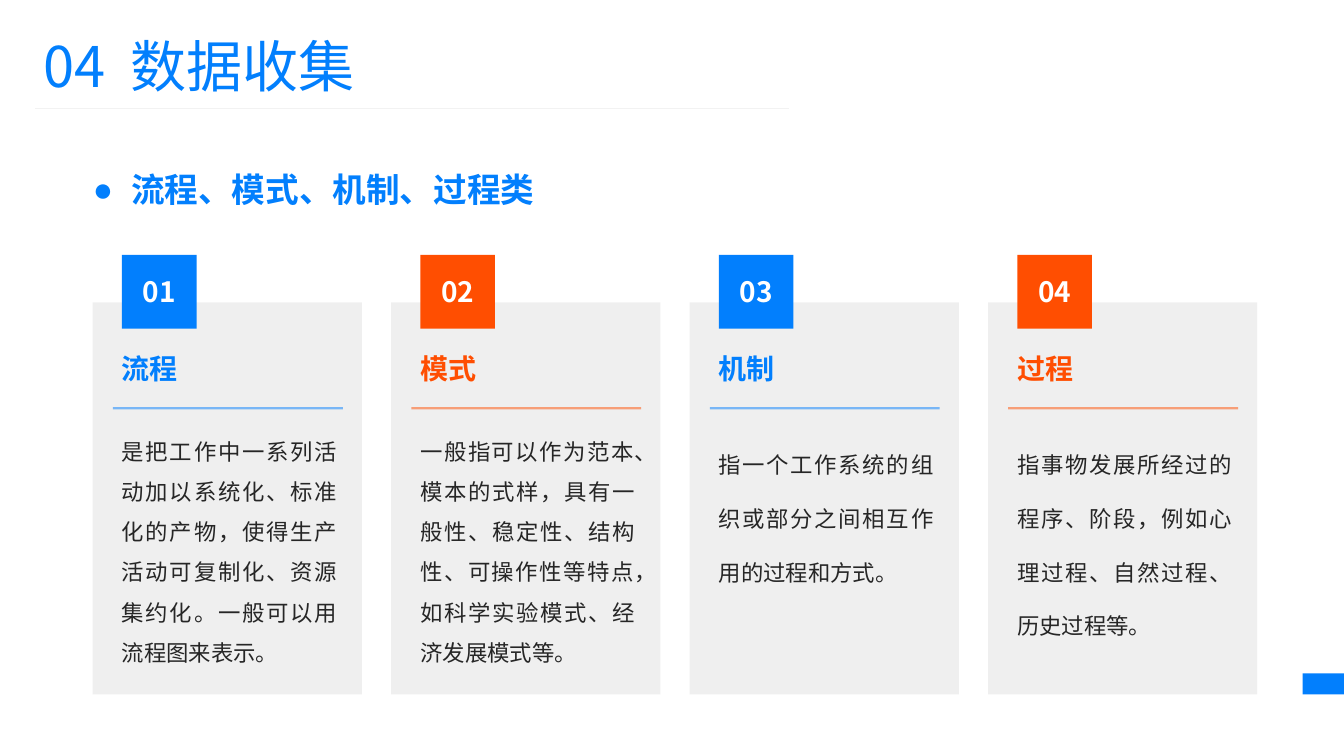
from lxml import etree
from pptx import Presentation
from pptx.dml.color import RGBColor
from pptx.enum import shapes, text
from pptx.oxml import ns
from pptx.util import Inches, Pt

FONT = "Noto Sans CJK SC"
BLUE, ORANGE = "027FFD", "FF4E01"
GREY, DARK, WHITE, PALE = "999999", "262626", "FFFFFF", "F2F2F2"
ALIGN, ANCHOR = text.PP_ALIGN, text.MSO_ANCHOR

CARDS = [
    ("流程", "是把工作中一系列活动加以系统化、标准化的产物，使得生产活动可复制化、资源集约化。一般可以用流程图来表示。", 1.5),
    ("模式", "一般指可以作为范本、模本的式样，具有一般性、稳定性、结构性、可操作性等特点，如科学实验模式、经济发展模式等。", 1.5),
    ("机制", "指一个工作系统的组织或部分之间相互作用的过程和方式。", 2.0),
    ("过程", "指事物发展所经过的程序、阶段，例如心理过程、自然过程、历史过程等。", 2.0),
]


def color(hex_value):
    return RGBColor.from_string(hex_value)


def add_alpha(color_format_parent, percent):
    """Make the solid colour below an element partly transparent."""
    rgb = color_format_parent.find(".//" + ns.qn("a:srgbClr"))
    etree.SubElement(rgb, ns.qn("a:alpha"), val=str(percent * 1000))


def write(shape, *pieces, size, fill, bold=False, align=ALIGN.LEFT,
          anchor=ANCHOR.TOP, spacing=None, inset=0, wrap=True):
    """Write the pieces as runs of one paragraph and return the paragraph."""
    frame = shape.text_frame
    frame.word_wrap = wrap
    frame.vertical_anchor = anchor
    if inset is not None:
        frame.margin_left = frame.margin_right = Inches(inset)
        frame.margin_top = frame.margin_bottom = Inches(inset)
    paragraph = frame.paragraphs[0]
    paragraph.alignment = align
    if spacing:
        paragraph.line_spacing = spacing
    for piece in pieces:
        run = paragraph.add_run()
        run.text = piece
        font = run.font
        font.size, font.bold, font.name = Pt(size), bold, FONT
        font.color.rgb = color(fill)
        east_asian = etree.SubElement(font._element, ns.qn("a:ea"))
        east_asian.set("typeface", FONT)
    return paragraph


def add_text(slide, left, top, width, height, *pieces, **style):
    box = slide.shapes.add_textbox(
        Inches(left), Inches(top), Inches(width), Inches(height))
    return write(box, *pieces, **style)


def add_block(slide, left, top, width, height, fill, alpha=None):
    block = slide.shapes.add_shape(
        shapes.MSO_SHAPE.RECTANGLE,
        Inches(left), Inches(top), Inches(width), Inches(height))
    block.shadow.inherit = False
    block.fill.solid()
    block.fill.fore_color.rgb = color(fill)
    block.line.fill.background()
    if alpha:
        add_alpha(block._element.spPr, alpha)
    return block


def add_rule(slide, left, top, width, stroke, weight, alpha=None):
    rule = slide.shapes.add_connector(
        shapes.MSO_CONNECTOR.STRAIGHT,
        Inches(left), Inches(top), Inches(left + width), Inches(top))
    rule.line.color.rgb = color(stroke)
    rule.line.width = Pt(weight)
    properties = rule._element.spPr
    if alpha:
        add_alpha(properties, alpha)
    etree.SubElement(properties, ns.qn("a:effectLst"))


def add_title(slide, left, top, width, height):
    title = add_text(slide, left, top, width, height, "04", " ", "数据收集",
                     size=40, fill=BLUE, inset=None)
    # Widen the gap between number and words
    title.runs[1].font._element.set("spc", "900")
    add_rule(slide, left + 0.02, top + 0.82, 7.48, PALE, 0.5)


def add_heading(slide, left, top, width, height):
    heading = add_text(slide, left, top, width, height, "流程、模式、机制、过程类",
                       size=24, fill=BLUE, bold=True,
                       align=ALIGN.CENTER, anchor=ANCHOR.BOTTOM)
    properties = heading._p.get_or_add_pPr()
    hang = Inches(0.38)
    properties.set("marL", str(hang))
    properties.set("indent", str(-hang))
    etree.SubElement(properties, ns.qn("a:buFont"), typeface="Arial")
    etree.SubElement(properties, ns.qn("a:buChar"), char="●")


def add_card(slide, left, top, width, height, number, name, body, spacing, accent):
    inner, inner_width = left + 0.29, width - 0.54
    add_block(slide, left, top, width, height, GREY, alpha=15)
    add_text(slide, inner, top + 1.21, inner_width, 1.89, body,
             size=16, fill=DARK, align=ALIGN.JUSTIFY, spacing=spacing)
    # Number tab over the top edge
    tab = add_block(slide, inner, top - 0.47, 0.74, 0.73, accent)
    write(tab, f"{number:02}", size=20, fill=WHITE, bold=True,
          align=ALIGN.CENTER, anchor=ANCHOR.MIDDLE, wrap=False)
    # Name and its underline
    add_rule(slide, left + 0.2, top + 1.05, width - 0.39, accent, 1.75, alpha=50)
    add_text(slide, inner, top + 0.42, inner_width, 0.47, name,
             size=20, fill=accent, bold=True, anchor=ANCHOR.MIDDLE)


def main():
    deck = Presentation()
    deck.slide_width, deck.slide_height = Inches(13.33), Inches(7.5)
    slide = deck.slides.add_slide(deck.slide_layouts[6])

    # Corner mark, title and heading
    add_block(slide, 12.92, 6.68, 0.41, 0.21, BLUE)
    add_title(slide, 0.33, 0.26, 7.68, 0.77)
    add_heading(slide, 0.52, 1.64, 5.18, 0.44)

    # Row of four cards
    for index, (name, body, spacing) in enumerate(CARDS):
        add_card(slide, 0.92 + 2.96 * index, 3, 2.67, 3.89,
                 index + 1, name, body, spacing, (BLUE, ORANGE)[index % 2])

    deck.save("out.pptx")


if __name__ == "__main__":
    main()
